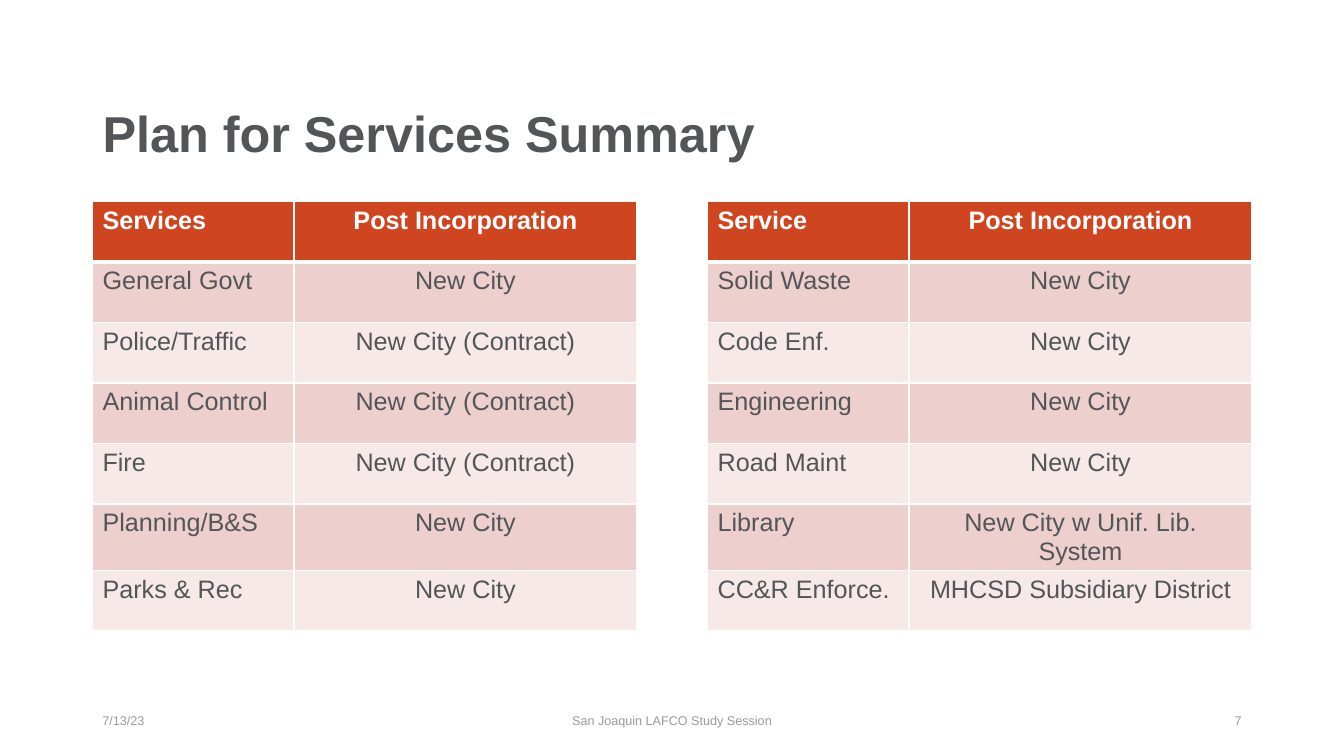
"""Build the Plan for Services Summary slide with its paired services table."""
from lxml import etree
from pptx import Presentation
from pptx.dml.color import RGBColor
from pptx.enum import text
from pptx.oxml import ns
from pptx.util import Cm, Pt

GRAY, FOOTER_GRAY, WHITE, ORANGE = "535659", "999A9B", "FFFFFF", "CF4520"
BANDS = ["F6E9E8", "EDCFCD"]
LEFT, CENTER, RIGHT = text.PP_ALIGN.LEFT, text.PP_ALIGN.CENTER, text.PP_ALIGN.RIGHT


def write(paragraph, words, size, color, bold=False, align=LEFT):
    paragraph.alignment = align
    run = paragraph.add_run()
    run.text = words
    run.font.name = "Arial"
    run.font.size = Pt(size)
    run.font.bold = bold
    run.font.color.rgb = RGBColor.from_string(color)


def add_borders(cell, bottom_width):
    properties = cell._tc.get_or_add_tcPr()
    widths = {"lnL": 1, "lnR": 1, "lnT": 1, "lnB": bottom_width}
    for index, (side, width) in enumerate(widths.items()):
        line = etree.Element(ns.qn(f"a:{side}"), w=str(Pt(width)))
        fill = etree.SubElement(line, ns.qn("a:solidFill"))
        etree.SubElement(fill, ns.qn("a:srgbClr"), val=WHITE)
        properties.insert(index, line)


presentation = Presentation()
presentation.slide_width, presentation.slide_height = Cm(33.87), Cm(19.05)
slide = presentation.slides.add_slide(presentation.slide_layouts[5])

title = slide.shapes.title
title.left, title.top, title.width, title.height = Cm(2.33), Cm(2.18), Cm(29.21), Cm(2.51)
title.text_frame.vertical_anchor = text.MSO_ANCHOR.MIDDLE
title.text_frame.auto_size = text.MSO_AUTO_SIZE.NONE
title_paragraph = title.text_frame.paragraphs[0]
title_paragraph.line_spacing = 0.9
write(title_paragraph, "Plan for Services Summary", 36, GRAY, bold=True)

services = [
    ["Services", "Post Incorporation", "", "Service", "Post Incorporation"],
    ["General Govt", "New City", "", "Solid Waste", "New City"],
    ["Police/Traffic", "New City (Contract)", "", "Code Enf.", "New City"],
    ["Animal Control", "New City (Contract)", "", "Engineering", "New City"],
    ["Fire", "New City (Contract)", "", "Road Maint", "New City"],
    ["Planning/B&S", "New City", "", "Library", "New City w Unif. Lib. System"],
    ["Parks & Rec", "New City", "", "CC&R Enforce.", "MHCSD Subsidiary District"],
]
column_widths = [5.08, 8.64, 1.78, 5.08, 8.64]
row_height = 1.524
table = slide.shapes.add_table(
    len(services), len(column_widths), Cm(2.33), Cm(5.08),
    Cm(sum(column_widths)), Cm(row_height * len(services))).table
table.first_row = table.horz_banding = False
for column, width in zip(table.columns, column_widths):
    column.width = Cm(width)
for row_index, row in enumerate(services):
    table.rows[row_index].height = Cm(row_height)
    is_header = row_index == 0
    for column_index, words in enumerate(row):
        cell = table.cell(row_index, column_index)
        add_borders(cell, 3 if is_header else 1)
        if not words:
            cell.fill.background()
            continue
        cell.fill.solid()
        cell.fill.fore_color.rgb = RGBColor.from_string(
            ORANGE if is_header else BANDS[row_index % 2])
        write(cell.text_frame.paragraphs[0], words, 18, WHITE if is_header else GRAY,
              is_header, CENTER if column_index in (1, 4) else LEFT)

footers = [
    ("7/13/23", 2.33, 7.62, LEFT),
    ("San Joaquin LAFCO Study Session", 11.22, 11.43, CENTER),
    ("7", 23.92, 7.62, RIGHT),
]
for words, left, width, align in footers:
    footer = slide.shapes.add_textbox(Cm(left), Cm(17.65), Cm(width), Cm(1.02))
    footer.text_frame.word_wrap = True
    footer.text_frame.vertical_anchor = text.MSO_ANCHOR.MIDDLE
    write(footer.text_frame.paragraphs[0], words, 9, FOOTER_GRAY, align=align)

presentation.save("out.pptx")
